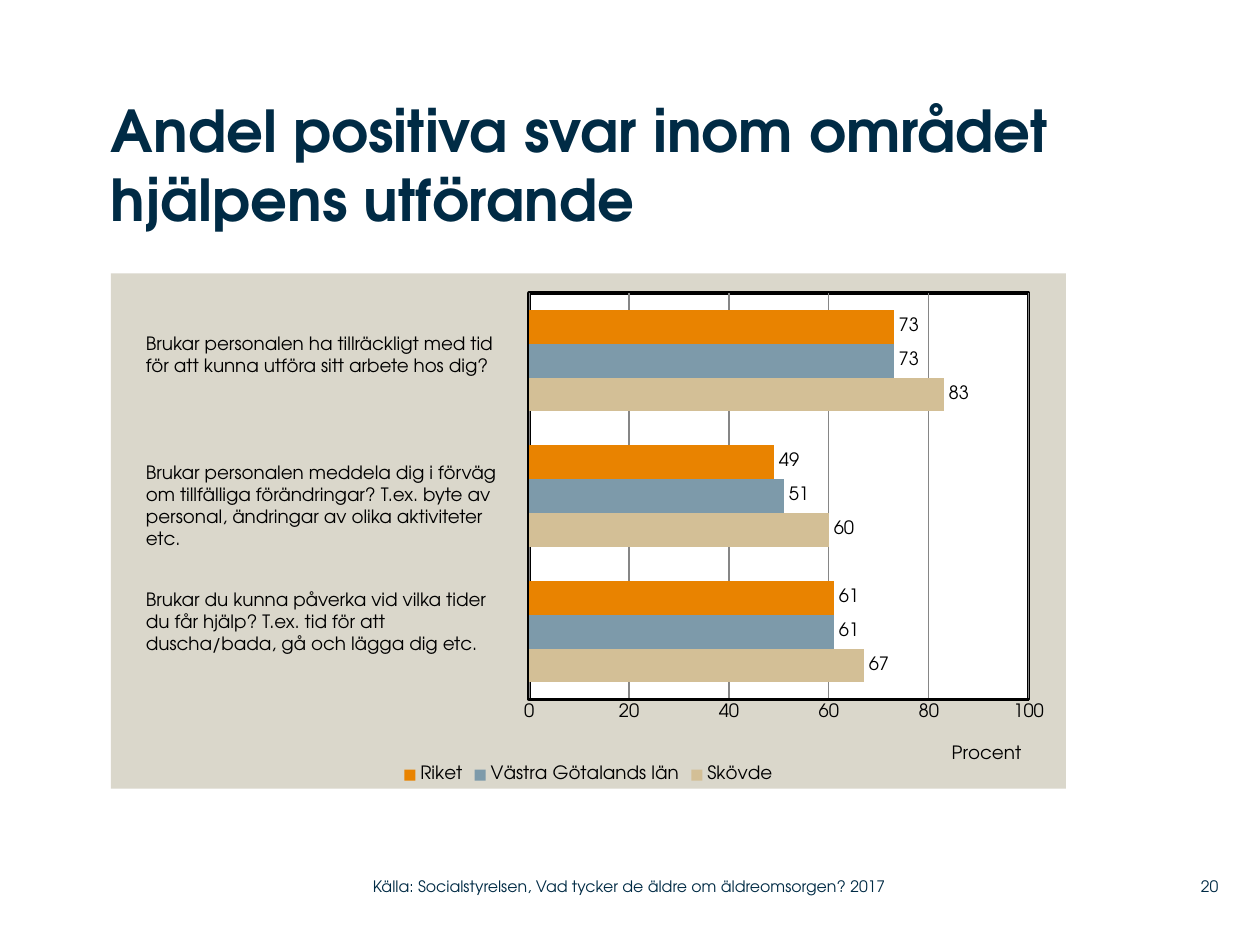
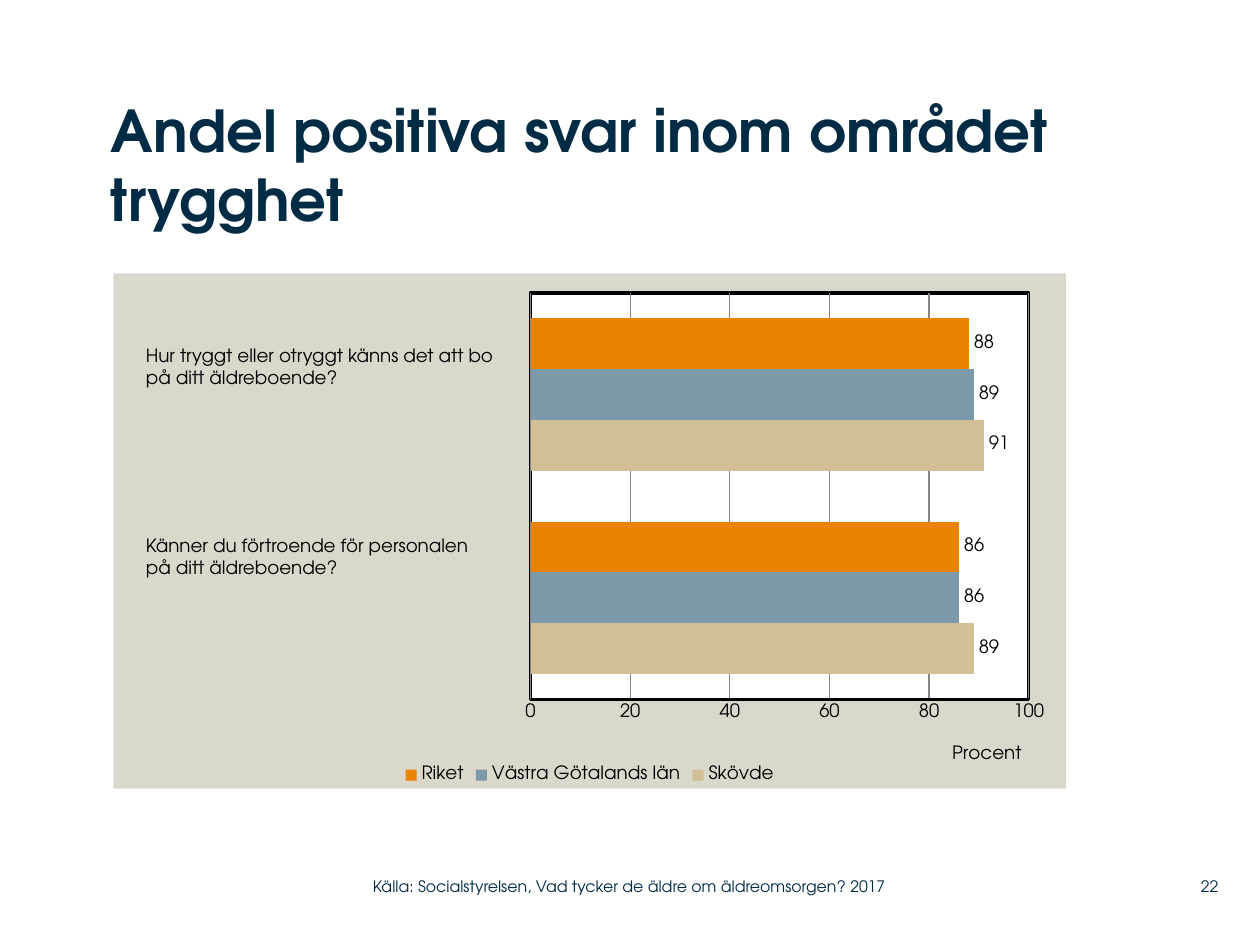
from lxml.etree import SubElement
from pptx import Presentation
from pptx.chart.data import CategoryChartData
from pptx.dml.color import RGBColor
from pptx.enum.chart import XL_CHART_TYPE, XL_LABEL_POSITION, XL_LEGEND_POSITION, XL_TICK_MARK
from pptx.enum.text import MSO_ANCHOR, MSO_AUTO_SIZE, PP_ALIGN
from pptx.oxml import parse_xml
from pptx.oxml.ns import nsdecls, qn
from pptx.util import Pt

COLORS = {"navy": "002B45", "black": "000000", "grid": "868686", "panel": "DAD7CB",
          "plot": "FFFFFF", "Skövde": "D3BF96", "Västra Götalands län": "7D9AAA",
          "Riket": "E98300"}
FONT = "TeX Gyre Adventor"
SOURCE = "Källa: Socialstyrelsen, Vad tycker de äldre om äldreomsorgen? 2017"
CHART_RIGHT = 609.1
PLOT_LAYOUT = {"x": 0.438, "y": 0.038, "w": 0.523, "h": 0.789}
AXIS_TITLE_LAYOUT = {"x": 0.877, "y": 0.907}


def color(name):
    return RGBColor.from_string(COLORS[name])


def format_font(font, size=10.5, color_name="black", bold=False):
    font.name, font.size, font.bold = FONT, Pt(size), bold
    font.color.rgb = color(color_name)


def write_text(frame, text, size=10.5, color_name="black", bold=False,
               align=PP_ALIGN.LEFT, anchor=MSO_ANCHOR.TOP, inset=(0, 0)):
    """Fill a text frame; each line of the text becomes a paragraph."""
    frame.word_wrap = True
    frame.vertical_anchor = anchor
    frame.margin_left = frame.margin_right = Pt(inset[0])
    frame.margin_top = frame.margin_bottom = Pt(inset[1])
    frame.text = text
    for paragraph in frame.paragraphs:
        paragraph.alignment = align
        for run in paragraph.runs:
            format_font(run.font, size, color_name, bold)


def area_format(fill, line=None):
    """Shape properties for a chart area, which has no public format object."""
    outline = "<a:noFill/>"
    if line:
        outline = f'<a:solidFill><a:srgbClr val="{COLORS[line]}"/></a:solidFill>'
    return parse_xml(
        f'<c:spPr {nsdecls("c", "a")}><a:solidFill><a:srgbClr val="{COLORS[fill]}"/>'
        f'</a:solidFill><a:ln w="{Pt(2)}">{outline}</a:ln></c:spPr>')


def place_chart_part(element, position, layout, inner=False):
    """Give a chart part a manual layout, as fractions of the chart."""
    for old_layout in element.findall(qn("c:layout")):
        element.remove(old_layout)
    holder = parse_xml(f'<c:layout {nsdecls("c")}/>')
    manual = SubElement(holder, qn("c:manualLayout"))
    settings = [("layoutTarget", "inner")] if inner else []
    settings += [("xMode", "edge"), ("yMode", "edge"), *layout.items()]
    for tag, value in settings:
        SubElement(manual, qn(f"c:{tag}")).set("val", str(value))
    element.insert(position, holder)


class SurveyDeck:
    def __init__(self):
        self.presentation = Presentation()
        self.presentation.slide_width, self.presentation.slide_height = Pt(720), Pt(540)
        self.slide = None

    def add_slide(self, title, number):
        self.slide = self.presentation.slides.add_slide(self.presentation.slide_layouts[5])
        shape = self.slide.shapes.title
        shape.left, shape.top, shape.width, shape.height = Pt(63.4), Pt(54), Pt(547.2), Pt(102.2)
        write_text(shape.text_frame, title, size=33, color_name="navy", bold=True)
        self.add_footer(str(number), 662.4, 33.8, PP_ALIGN.RIGHT)
        self.add_footer(SOURCE, 213.1, 319, PP_ALIGN.LEFT)

    def add_footer(self, text, left, width, align):
        box = self.slide.shapes.add_textbox(Pt(left), Pt(496.1), Pt(width), Pt(20.9))
        write_text(box.text_frame, text, size=9, color_name="navy", align=align,
                   anchor=MSO_ANCHOR.MIDDLE)

    def add_question(self, text, top, height, width=217.4):
        box = self.slide.shapes.add_textbox(Pt(76.3), Pt(top), Pt(width), Pt(height))
        write_text(box.text_frame, text, inset=(7.2, 3.6))
        box.text_frame.auto_size = MSO_AUTO_SIZE.SHAPE_TO_FIT_TEXT

    def add_bar_chart(self, left, series_values):
        data = CategoryChartData()
        question_count = len(series_values["Riket"])
        data.categories = [str(index + 1) for index in range(question_count)]
        for name, values in series_values.items():
            data.add_series(name, values)
        chart = self.slide.shapes.add_chart(
            XL_CHART_TYPE.BAR_CLUSTERED, Pt(left), Pt(156.2),
            Pt(CHART_RIGHT - left), Pt(294.5), data).chart
        format_font(chart.font)
        chart.has_title = False
        chart.has_legend = True
        chart.legend.position = XL_LEGEND_POSITION.BOTTOM
        chart.legend.include_in_layout = False
        format_font(chart.legend.font)
        self.format_bars(chart.plots[0])
        self.format_axes(chart)

        # Panel and plot area
        chart_element = chart.element.find(qn("c:chart"))
        chart_element.addnext(area_format("panel"))
        plot_area = chart_element.find(qn("c:plotArea"))
        place_chart_part(plot_area, 0, PLOT_LAYOUT, inner=True)
        plot_area.append(area_format("plot", line="black"))

    def format_bars(self, plot):
        plot.gap_width, plot.overlap = 100, 0
        plot.vary_by_categories = False
        for series in plot.series:
            series.format.fill.solid()
            series.format.fill.fore_color.rgb = color(series.name)
            labels = series.data_labels
            labels.show_value = True
            labels.position = XL_LABEL_POSITION.OUTSIDE_END
            format_font(labels.font)

    def format_axes(self, chart):
        chart.category_axis.visible = False
        axis = chart.value_axis
        axis.minimum_scale, axis.maximum_scale, axis.major_unit = 0, 100, 20
        axis.major_tick_mark = axis.minor_tick_mark = XL_TICK_MARK.NONE
        axis.format.line.color.rgb = color("black")
        axis.format.line.width = Pt(2)
        axis.has_major_gridlines = True
        axis.major_gridlines.format.line.color.rgb = color("grid")
        axis.major_gridlines.format.line.width = Pt(0.75)
        format_font(axis.tick_labels.font)
        title_frame = axis.axis_title.text_frame
        title_frame.text = "Procent"
        format_font(title_frame.paragraphs[0].runs[0].font)
        place_chart_part(axis.axis_title._element, 1, AXIS_TITLE_LAYOUT)


def main():
    deck = SurveyDeck()

    # How the help is carried out
    deck.add_slide("Andel positiva svar inom området hjälpens utförande", 20)
    deck.add_bar_chart(63.4, {"Skövde": (67, 60, 83),
                              "Västra Götalands län": (61, 51, 73),
                              "Riket": (61, 49, 73)})
    deck.add_question("Brukar personalen ha tillräckligt med tid\n"
                      "för att kunna utföra sitt arbete hos dig?", 186.5, 32.4)
    deck.add_question("Brukar personalen meddela dig i förväg\n"
                      "om tillfälliga förändringar? T.ex. byte av personal, "
                      "ändringar av olika aktiviteter\netc.", 259.9, 58.3)
    deck.add_question("Brukar du kunna påverka vid vilka tider\n"
                      "du får hjälp? T.ex. tid för att\n"
                      "duscha/bada, gå och lägga dig etc.", 332.6, 45.4)

    # Safety
    deck.add_slide("Andel positiva svar inom området trygghet", 22)
    deck.add_bar_chart(64.8, {"Skövde": (89, 91),
                              "Västra Götalands län": (86, 89),
                              "Riket": (86, 88)})
    deck.add_question("Hur tryggt eller otryggt känns det att bo\n"
                      "på ditt äldreboende?", 193, 32.4)
    deck.add_question("Känner du förtroende för personalen\n"
                      "på ditt äldreboende?", 301.7, 32.4, width=214.6)

    deck.presentation.save("out.pptx")


if __name__ == "__main__":
    main()
